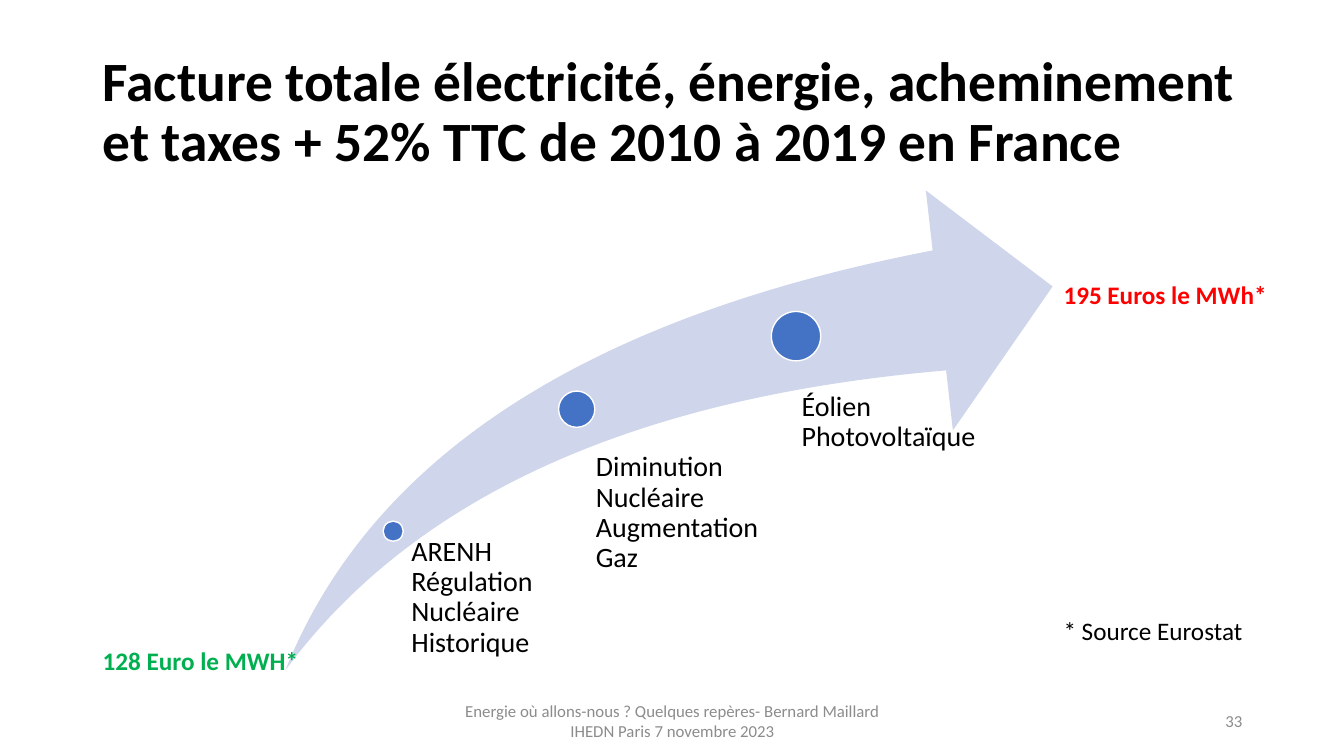
"""Build the slide on the rise of the French electricity bill, 2010 to 2019."""
from pptx import Presentation, util as u
from pptx.dml.color import RGBColor
from pptx.enum import shapes, text

PX = 9144
BLACK = RGBColor(0, 0, 0)
WHITE = RGBColor(255, 255, 255)
GREY = RGBColor(0x8C, 0x8C, 0x8C)
GREEN = RGBColor(0, 0xB0, 0x50)
RED = RGBColor(255, 0, 0)
BLUE = RGBColor(0x44, 0x72, 0xC4)
PALE = RGBColor(0xCF, 0xD5, 0xEA)
LEFT, CENTER, RIGHT = text.PP_ALIGN.LEFT, text.PP_ALIGN.CENTER, text.PP_ALIGN.RIGHT
TOP, MIDDLE = text.MSO_ANCHOR.TOP, text.MSO_ANCHOR.MIDDLE

prs = Presentation()
prs.slide_width, prs.slide_height = 1333 * PX, 750 * PX
s = prs.slides.add_slide(prs.slide_layouts[6])


def add_text(box, words, size, color=BLACK, bold=False, align=LEFT,
             anchor=TOP, spacing=1.0, wrap=True, inset=True):
    tf = s.shapes.add_textbox(*(n * PX for n in box)).text_frame
    tf.word_wrap = wrap
    tf.vertical_anchor = anchor
    if not inset:
        tf.margin_left = tf.margin_top = tf.margin_right = tf.margin_bottom = 0
    p = tf.paragraphs[0]
    p.text = words
    p.alignment = align
    p.line_spacing = spacing
    p.font.name, p.font.size, p.font.bold = "Calibri", u.Pt(size), bold
    p.font.color.rgb = color


def add_shape(kind, box, fill):
    sp = s.shapes.add_shape(kind, *(n * PX for n in box))
    sp.shadow.inherit = False
    sp.fill.solid()
    sp.fill.fore_color.rgb = fill
    return sp


add_text((92, 40, 1150, 145),
         "Facture totale électricité, énergie, acheminement et taxes + 52% TTC de 2010 à 2019 en France",
         39.6, bold=True, anchor=MIDDLE, spacing=0.9)

arrow = add_shape(shapes.MSO_SHAPE.SWOOSH_ARROW, (283, 189, 761, 476), PALE)
arrow.adjustments[0] = arrow.adjustments[1] = 0.25
arrow.line.fill.background()

steps = [
    ((380, 517, 20), (408, 533, 167, 138), "ARENH Régulation Nucléaire Historique"),
    ((554, 388, 36), (591, 449, 164, 216), "Diminution Nucléaire Augmentation Gaz"),
    ((765, 309, 49), (795, 389, 191, 273), "Éolien Photovoltaïque"),
]
for (x, y, size), label_box, label in steps:
    dot = add_shape(shapes.MSO_SHAPE.OVAL, (x, y, size, size), BLUE)
    dot.line.color.rgb = WHITE
    dot.line.width = u.Pt(1)
    add_text(label_box, label, 20, spacing=0.9, inset=False)

add_text((442, 695, 450, 40),
         "Energie où allons-nous ? Quelques repères- Bernard Maillard IHEDN Paris 7 novembre 2023",
         12, GREY, align=CENTER, anchor=MIDDLE)
add_text((942, 695, 300, 40), "33", 12, GREY, align=RIGHT, anchor=MIDDLE)

notes = [
    ((92, 635, 216, 40), "128 Euro le MWH*", GREEN, True),
    ((1045, 272, 224, 40), "195 Euros le MWh*", RED, True),
    ((1045, 606, 200, 40), "* Source Eurostat", BLACK, False),
]
for box, words, color, bold in notes:
    add_text(box, words, 18, color, bold, wrap=False)

prs.save("out.pptx")
